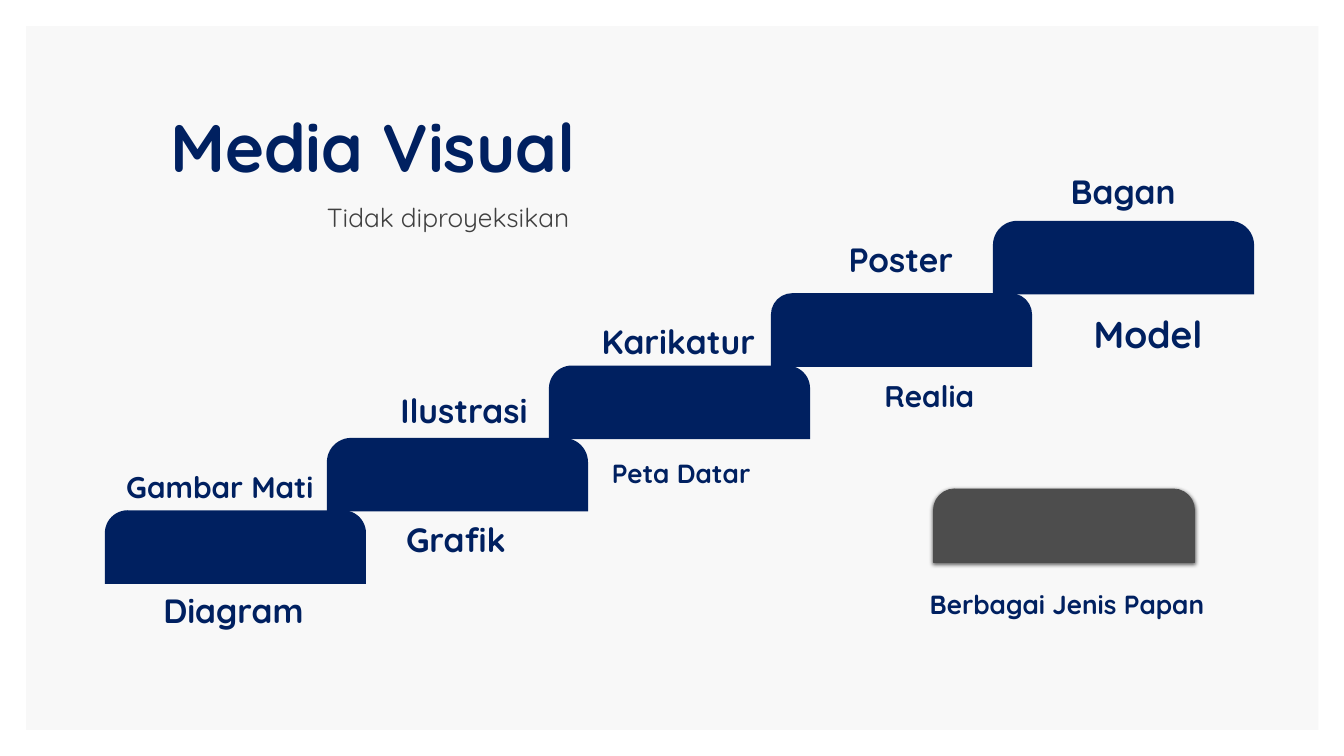
from lxml import etree
from pptx import Presentation
from pptx import util as u
from pptx.dml import color
from pptx.enum import shapes, text
from pptx.oxml import ns

NAVY, GREY, PALE, SLATE = "002060", "404040", "F8F8F8", "4D4D4D"
LEFT, MID, RIGHT = text.PP_ALIGN.LEFT, text.PP_ALIGN.CENTER, text.PP_ALIGN.RIGHT
STEP = (19.43, 9.73)


def rgb(code):
    return color.RGBColor.from_string(code)


class Deck:
    font = "Quicksand"

    def __init__(self, wide, high):
        self.prs = Presentation()
        self.prs.slide_width, self.prs.slide_height = u.Inches(wide), u.Inches(high)
        self.slide = self.prs.slides.add_slide(self.prs.slide_layouts[0])

    def area(self, x, y, w, h):
        col, row = self.prs.slide_width / 100, self.prs.slide_height / 100
        return [u.Emu(round(v)) for v in (x * col, y * row, w * col, h * row)]

    def phrase(self, frame, words, size, ink=NAVY, bold=True, align=MID):
        frame.word_wrap = True
        par = frame.paragraphs[0]
        par.alignment = align
        run = par.add_run()
        run.text = words
        run.font.name, run.font.size, run.font.bold = self.font, u.Pt(size), bold
        run.font.color.rgb = rgb(ink)
        return par

    def head(self, slot, box, words, size, ink, bold):
        hold = self.slide.placeholders[slot]
        hold.left, hold.top, hold.width, hold.height = self.area(*box)
        frame = hold.text_frame
        frame.auto_size = text.MSO_AUTO_SIZE.NONE
        frame.vertical_anchor = text.MSO_ANCHOR.MIDDLE
        par = self.phrase(frame, words, size, ink, bold)
        par.space_before, par.line_spacing = u.Pt(9), 0.9

    def label(self, words, box, size=24, align=MID):
        frame = self.slide.shapes.add_textbox(*self.area(*box)).text_frame
        self.phrase(frame, words, size, align=align)
        frame.auto_size = text.MSO_AUTO_SIZE.SHAPE_TO_FIT_TEXT

    def block(self, kind, box, fill):
        form = self.slide.shapes.add_shape(kind, *self.area(*box))
        form.shadow.inherit = False
        form.fill.solid()
        form.fill.fore_color.rgb = rgb(fill)
        form.line.fill.background()
        return form

    def back(self, box):
        form = self.block(shapes.MSO_SHAPE.RECTANGLE, box, PALE)
        self.slide.shapes._spTree.insert(2, form._element)

    def step(self, x, y, curve, fill=NAVY):
        form = self.block(shapes.MSO_SHAPE.ROUND_2_SAME_RECTANGLE, (x, y, *STEP), fill)
        form.adjustments[0] = curve
        return form

    def board(self, x, y):
        form = self.step(x, y, 0.29, SLATE)
        form.fill.gradient()
        form.fill.gradient_angle = 270
        for stop, (place, tone) in zip(form.fill.gradient_stops, ((0.5, SLATE), (1, "4C4C4C"))):
            stop.position, stop.color.rgb = place, rgb(tone)
        form.line.color.rgb, form.line.width = rgb(SLATE), u.Pt(0.5)
        glow = form._element.spPr.find(ns.qn("a:effectLst"))
        cast = etree.SubElement(glow, ns.qn("a:outerShdw"), blurRad=str(u.Pt(3)),
                                dist=str(u.Pt(1)), dir="5400000", rotWithShape="0")
        ink = etree.SubElement(cast, ns.qn("a:srgbClr"), val="000000")
        etree.SubElement(ink, ns.qn("a:alpha"), val="63000")


def main():
    deck = Deck(13.33, 7.5)
    deck.back((1.95, 3.47, 96.15, 93.07))
    deck.head(0, (4.2, 14.4, 47.1, 11.2), "Media Visual", 48, NAVY, True)
    deck.head(1, (6.45, 26.13, 53.78, 5.6), "Tidak diproyeksikan", 18.7, GREY, False)

    for words, box, size, align in (
        ("Model", (77.48, 40.53, 15.9, 7.33), 26.7, MID),
        ("Realia", (61.2, 49.33, 15.9, 6.13), 21.3, MID),
        ("Peta Datar", (44.78, 59.87, 15.9, 5.6), 18.7, LEFT),
        ("Ilustrasi", (21.68, 50.93, 18.3, 6.67), 24, RIGHT),
        ("Gambar Mati", (8.4, 61.33, 15.9, 6.13), 21.3, MID),
    ):
        deck.label(words, box, size, align)

    for i, curve in enumerate((0.31, 0.33, 0.31, 0.29, 0.33)):
        deck.step(7.8 + 16.52 * i, 67.5 - 9.57 * i, curve)

    names = (("Diagram", 77.33), ("Grafik", 68), ("Karikatur", 41.73),
             ("Poster", 30.93), ("Bagan", 22))
    for i, (words, y) in enumerate(names):
        deck.label(words, (9.83 + 16.55 * i, y, 15.08, 6.67))

    deck.board(69.45, 64.67)
    deck.label("Berbagai Jenis Papan", (67.05, 77.2, 24.68, 5.6), 18.7)
    deck.prs.save("out.pptx")


if __name__ == "__main__":
    main()
